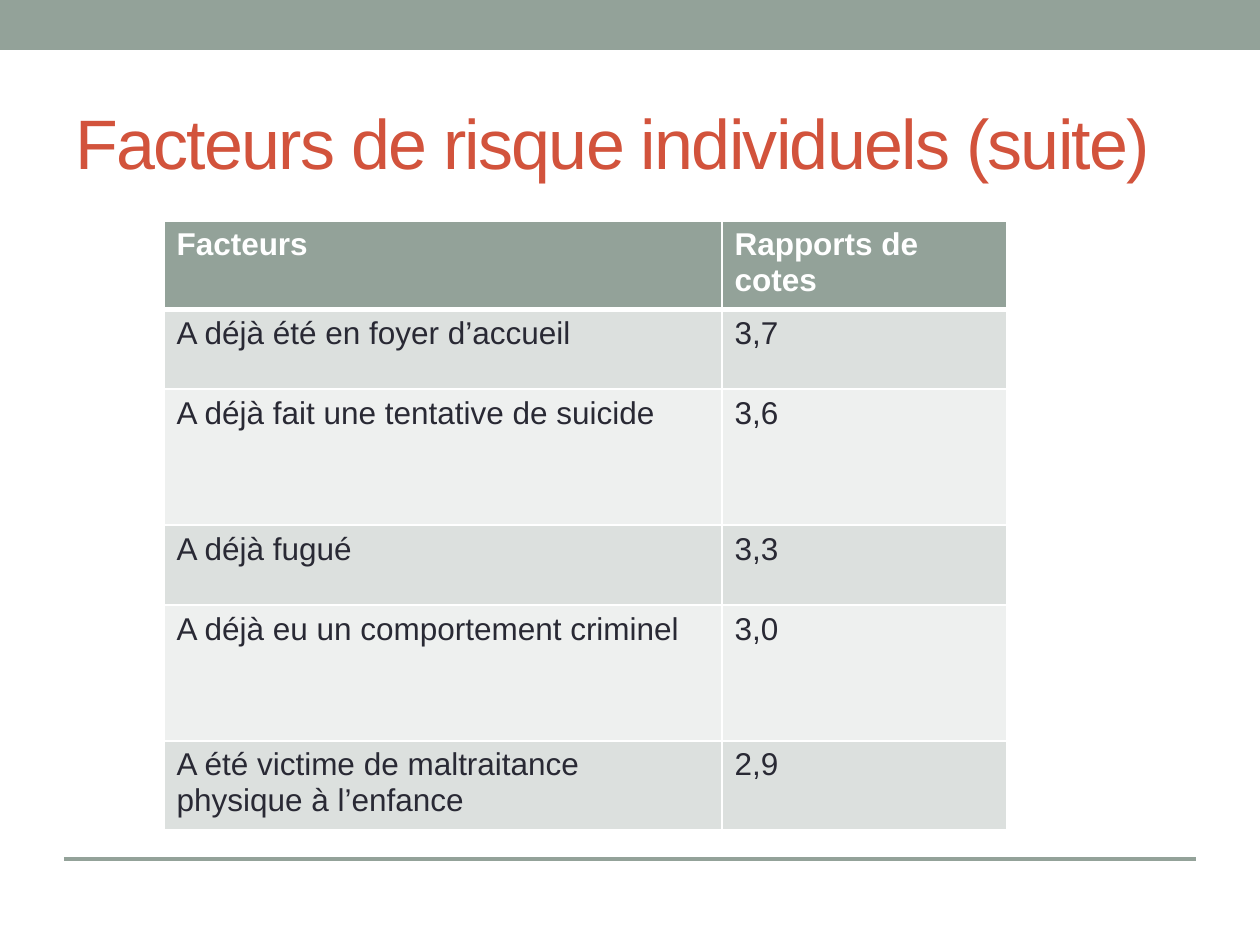
from pptx import Presentation
from pptx.dml.color import RGBColor
from pptx.enum.shapes import MSO_CONNECTOR, MSO_SHAPE
from pptx.enum.text import MSO_ANCHOR
from pptx.oxml.ns import qn
from pptx.util import Emu, Pt
from lxml.etree import SubElement

# Content
TITLE = "Facteurs de risque individuels (suite)"
HEADER = ("Facteurs", "Rapports de cotes")
FACTORS = [
    ("A déjà été en foyer d’accueil", "3,7"),
    ("A déjà fait une tentative de suicide", "3,6"),
    ("A déjà fugué", "3,3"),
    ("A déjà eu un comportement criminel", "3,0"),
    ("A été victime de maltraitance physique à l’enfance", "2,9"),
]

# Style
COLORS = {
    "accent": "93A299",
    "title": "D2533C",
    "text": "292934",
    "white": "FFFFFF",
    "odd": "DCE0DE",
    "even": "EEF0EF",
}
FONT = "Arial"
COLUMN_WIDTHS = (558, 285)
ROW_HEIGHTS = (80, 80, 136, 80, 136, 80)


def px(n):
    return Emu(n * 914400 // 126)


def rgb(name):
    return RGBColor.from_string(COLORS[name])


def add_text(frame, text, size, color, bold=False):
    run = frame.paragraphs[0].add_run()
    run.text = text
    run.font.name = FONT
    run.font.size = Pt(size)
    run.font.bold = bold
    run.font.color.rgb = rgb(color)
    return run


def set_borders(cell, bottom):
    props = cell._tc.get_or_add_tcPr()
    sides = {"a:lnL": 1, "a:lnR": 1, "a:lnT": 1, "a:lnB": bottom}
    for index, (tag, width) in enumerate(sides.items()):
        line = props.makeelement(qn(tag), {"w": str(Pt(width))})
        fill = SubElement(line, qn("a:solidFill"))
        SubElement(fill, qn("a:srgbClr"), val=COLORS["white"])
        props.insert(index, line)


prs = Presentation()
prs.slide_width, prs.slide_height = px(1260), px(945)
slide = prs.slides.add_slide(prs.slide_layouts[6])
shapes = slide.shapes

# Top band
band = shapes.add_shape(MSO_SHAPE.RECTANGLE, 0, 0, px(1260), px(50))
band.shadow.inherit = False
band.fill.solid()
band.fill.fore_color.rgb = rgb("accent")
band.line.fill.background()

# Bottom rule
rule = shapes.add_connector(MSO_CONNECTOR.STRAIGHT, px(64), px(859), px(1196), px(859))
rule.line.color.rgb = rgb("accent")
rule.line.width = Pt(2.08)
SubElement(rule._element.spPr, qn("a:effectLst"))

# Title
title = shapes.add_textbox(px(63), px(73), px(1134), px(136)).text_frame
title.word_wrap = True
title.vertical_anchor = MSO_ANCHOR.MIDDLE
title_run = add_text(title, TITLE, 40, "title")
title_run.font._element.set("spc", "-100")

# Table of risk factors
rows = [HEADER, *FACTORS]
table = shapes.add_table(len(rows), len(HEADER), px(164), px(221),
                         px(sum(COLUMN_WIDTHS)), px(sum(ROW_HEIGHTS))).table
for column, width in zip(table.columns, COLUMN_WIDTHS):
    column.width = px(width)
for r, (row, height) in enumerate(zip(rows, ROW_HEIGHTS)):
    table.rows[r].height = px(height)
    is_header = r == 0
    background = "accent" if is_header else "odd" if r % 2 else "even"
    for c, text in enumerate(row):
        cell = table.cell(r, c)
        cell.fill.solid()
        cell.fill.fore_color.rgb = rgb(background)
        set_borders(cell, bottom=3 if is_header else 1)
        if r == 1:
            cell._tc.tcPr.find(qn("a:lnT")).set("w", str(Pt(3)))
        add_text(cell.text_frame, text, 18, "white" if is_header else "text", is_header)

prs.save("out.pptx")
